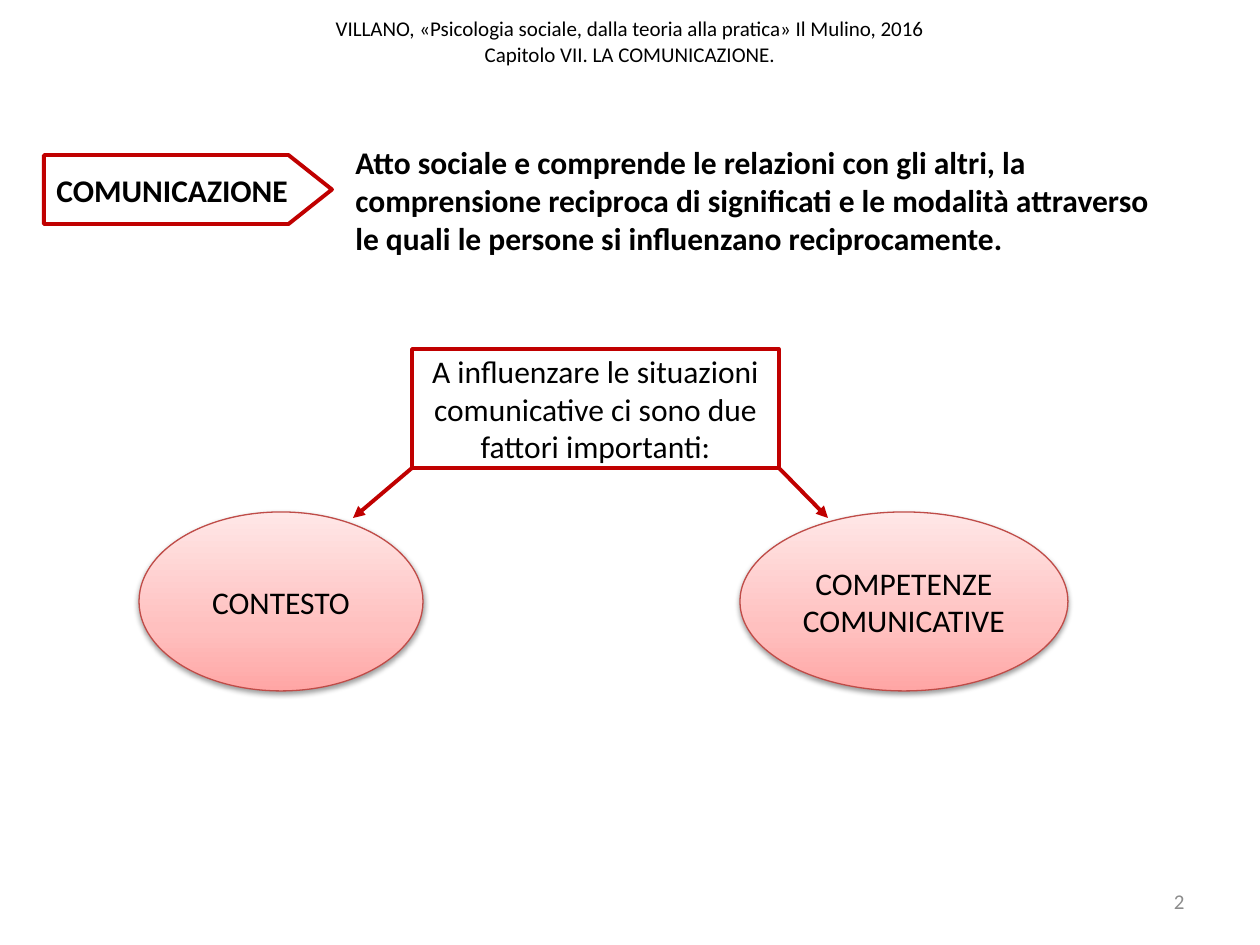
from lxml.etree import SubElement
from pptx import Presentation
from pptx.dml.color import RGBColor
from pptx.enum.shapes import MSO_CONNECTOR, MSO_SHAPE
from pptx.enum.text import MSO_ANCHOR as ANCHOR, PP_ALIGN as ALIGN
from pptx.oxml.ns import qn
from pptx.util import Emu, Pt

SCALE = 914400 / 126
FONT = "Calibri"
BLACK = RGBColor(0x00, 0x00, 0x00)
GRAY = RGBColor(0x8C, 0x8C, 0x8C)
RED = RGBColor(0xC0, 0x00, 0x00)
OVAL_LINE = RGBColor(0xBF, 0x4C, 0x48)
OVAL_STOPS = [
    (0, RGBColor(0xFF, 0xA6, 0xA5)),
    (35, RGBColor(0xFF, 0xC0, 0xBF)),
    (100, RGBColor(0xFF, 0xE7, 0xE7)),
]

TEXTS = [
    ((0, -14, 1260, 110),
     ["VILLANO, «Psicologia sociale, dalla teoria alla pratica» Il Mulino, 2016",
      "Capitolo VII. LA COMUNICAZIONE."],
     dict(size=12, align=ALIGN.CENTER)),
    ((903, 876, 294, 50), ["2"], dict(size=12, align=ALIGN.RIGHT, color=GRAY)),
    ((343, 137, 844, 127),
     ["Atto sociale e comprende le relazioni con gli altri, la comprensione reciproca "
      "di significati e le modalità attraverso le quali le persone si influenzano "
      "reciprocamente."],
     dict(bold=True, anchor=ANCHOR.TOP)),
]
TOPIC = ((44, 155, 288, 69), "COMUNICAZIONE")
FACTORS_INTRO = (
    (412, 349, 367, 119),
    "A influenzare le situazioni comunicative ci sono due fattori importanti:",
)
OVAL_TOP, OVAL_HEIGHT = 512, 179
FACTORS = [
    (139, 284, "CONTESTO"),
    (740, 328, "COMPETENZE COMUNICATIVE"),
]
ARROW_TIPS = [353, 828]
ARROW_TIP_Y = 518


def px(*values):
    return [Emu(round(value * SCALE)) for value in values]


def write(shape, lines, size=18, align=ALIGN.LEFT, color=BLACK, bold=False,
          anchor=ANCHOR.MIDDLE):
    frame = shape.text_frame
    frame.word_wrap = True
    frame.vertical_anchor = anchor
    paragraph = frame.paragraphs[0]
    paragraph.alignment = align
    for index, line in enumerate(lines):
        if index:
            paragraph.add_line_break()
        run = paragraph.add_run()
        run.text = line
        run.font.name = FONT
        run.font.size = Pt(size)
        run.font.bold = bold
        run.font.color.rgb = color


def add_shape(slide, kind, box, line_color, line_width):
    shape = slide.shapes.add_shape(kind, *px(*box))
    shape.shadow.inherit = False
    shape.fill.background()
    shape.line.color.rgb = line_color
    shape.line.width = Pt(line_width)
    return shape


def add_color(parent, color):
    return SubElement(parent, qn("a:srgbClr"), val=str(color))


def style_oval(shape):
    shape.fill.gradient()
    shape.fill.gradient_angle = 90
    properties = shape.element.spPr
    stops = properties.find(qn("a:gradFill")).find(qn("a:gsLst"))
    for stop in list(stops):
        stops.remove(stop)
    for position, color in OVAL_STOPS:
        add_color(SubElement(stops, qn("a:gs"), pos=str(position * 1000)), color)
    shadow = SubElement(properties.find(qn("a:effectLst")), qn("a:outerShdw"),
                        blurRad=str(Pt(3.1)), dist=str(Pt(1.6)), dir="5400000",
                        rotWithShape="0")
    SubElement(add_color(shadow, BLACK), qn("a:alpha"), val="38000")


def add_arrow(slide, start, end):
    arrow = slide.shapes.add_connector(MSO_CONNECTOR.STRAIGHT, *px(*start, *end))
    arrow.line.color.rgb = RED
    arrow.line.width = Pt(2.25)
    SubElement(arrow.line._get_or_add_ln(), qn("a:tailEnd"), type="triangle")
    SubElement(arrow.element.spPr, qn("a:effectLst"))


def main():
    presentation = Presentation()
    presentation.slide_width, presentation.slide_height = px(1260, 945)
    slide = presentation.slides.add_slide(presentation.slide_layouts[6])

    for box, lines, style in TEXTS:
        write(slide.shapes.add_textbox(*px(*box)), lines, **style)

    box, text = TOPIC
    topic = add_shape(slide, MSO_SHAPE.PENTAGON, box, RED, 2.25)
    topic.adjustments[0] = 0.63
    write(topic, [text], bold=True)

    box, text = FACTORS_INTRO
    write(add_shape(slide, MSO_SHAPE.RECTANGLE, box, RED, 2), [text], align=ALIGN.CENTER)

    left, top, width, height = box
    for corner_x, tip_x in zip((left, left + width), ARROW_TIPS):
        add_arrow(slide, (corner_x, top + height), (tip_x, ARROW_TIP_Y))

    for left, width, text in FACTORS:
        oval = add_shape(slide, MSO_SHAPE.OVAL, (left, OVAL_TOP, width, OVAL_HEIGHT),
                         OVAL_LINE, 0.75)
        style_oval(oval)
        write(oval, [text], align=ALIGN.CENTER)

    presentation.save("out.pptx")


if __name__ == "__main__":
    main()
